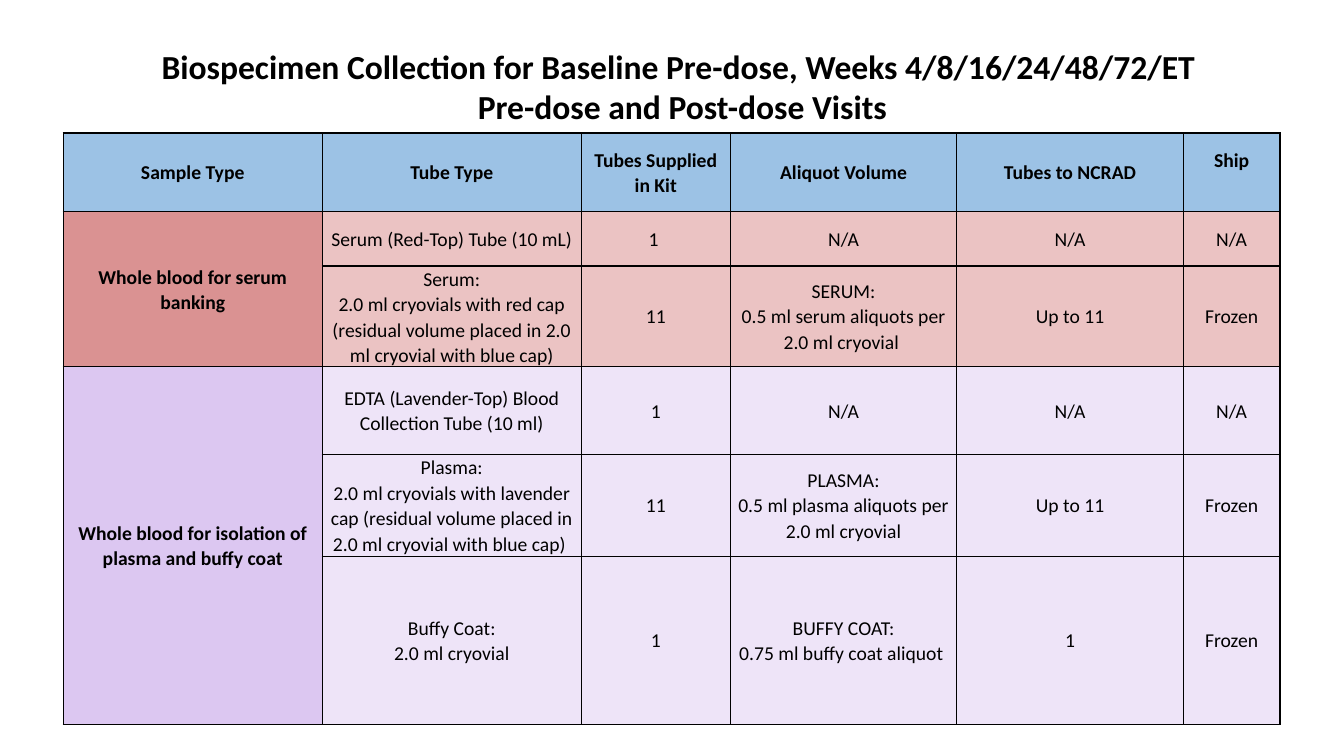
"""Builds the biospecimen collection slide: a centred title above a table of tubes and aliquots."""
from lxml import etree
from pptx import Presentation
from pptx import util as u
from pptx.dml.color import RGBColor
from pptx.enum import text
from pptx.oxml import parse_xml
from pptx.oxml.ns import nsdecls

COLORS = {
    "ink": "000000",
    "header": "9CC2E5",
    "serum_group": "DA9292",
    "serum": "EBC3C3",
    "plasma_group": "DCC7F1",
    "plasma": "EEE4F8",
}
COL_WIDTHS = [185, 185, 106.5, 161.8, 161.8, 69]
ROWS = [
    (56.2, "header", ["Sample Type", "Tube Type", "Tubes Supplied in Kit",
                      "Aliquot Volume", "Tubes to NCRAD", "Ship"]),
    (38.9, "serum", ["Whole blood for serum banking", "Serum (Red-Top) Tube (10 mL)",
                     "1 ", "N/A", "N/A", "N/A"]),
    (71.3, "serum", ["", "Serum:\n2.0 ml cryovials with red cap (residual volume placed "
                     "in 2.0 ml cryovial with blue cap)", "11",
                     "SERUM:\n0.5 ml serum aliquots per 2.0 ml cryovial ", "Up to 11", "Frozen"]),
    (62.6, "plasma", ["Whole blood for isolation of plasma and buffy coat",
                      "EDTA (Lavender-Top) Blood Collection Tube (10 ml)",
                      "1", "N/A", "N/A", "N/A"]),
    (72.7, "plasma", ["", "Plasma:\n2.0 ml cryovials with lavender cap (residual volume placed "
                      "in 2.0 ml cryovial with blue cap) ", "11",
                      "PLASMA:\n0.5 ml plasma aliquots per 2.0 ml cryovial", "Up to 11", "Frozen"]),
    (120.2, "plasma", ["", "Buffy Coat:\n2.0 ml cryovial", "1",
                       "BUFFY COAT:\n0.75 ml buffy coat aliquot ", "1", "Frozen"]),
]
GROUPS = [(1, 2), (3, 5)]
CELL_FORMAT = {
    "margin_left": u.Pt(5),
    "margin_right": u.Pt(5),
    "margin_top": 0,
    "margin_bottom": 0,
    "vertical_anchor": text.MSO_ANCHOR.MIDDLE,
}


def write(tf, content, size, bold, spacing):
    """Fills a text frame with centred paragraphs, one for each line."""
    tf.text = content
    font_format = {"name": "Calibri", "size": u.Pt(size), "bold": bold}
    for p in tf.paragraphs:
        p.alignment = text.PP_ALIGN.CENTER
        p.line_spacing = spacing
        for r in p.runs:
            for name, value in font_format.items():
                setattr(r.font, name, value)
            r.font.color.rgb = RGBColor.from_string(COLORS["ink"])


def add_borders(cell):
    """Draws a thin line on the four sides of a cell."""
    tc_pr = cell._tc.get_or_add_tcPr()
    for side in "LRTB":
        ln = parse_xml(f'<a:ln{side} {nsdecls("a")} w="{u.Pt(1)}"/>')
        fill = etree.SubElement(ln, "{%s}solidFill" % ln.nsmap["a"])
        etree.SubElement(fill, "{%s}srgbClr" % ln.nsmap["a"], val=COLORS["ink"])
        tc_pr.append(ln)


prs = Presentation()
prs.slide_width, prs.slide_height = u.Pt(960), u.Pt(540)
s = prs.slides.add_slide(prs.slide_layouts[6])

title = s.shapes.add_textbox(u.Pt(7.2), u.Pt(28.8), u.Pt(960.5), u.Pt(65.5))
tf = title.text_frame
tf.word_wrap = True
tf.vertical_anchor = text.MSO_ANCHOR.MIDDLE
write(tf, "Biospecimen Collection for Baseline Pre-dose, Weeks 4/8/16/24/48/72/ET \n"
      "Pre-dose and Post-dose Visits", 24, True, 1.0)

frame = s.shapes.add_table(len(ROWS), len(COL_WIDTHS), u.Pt(45.2), u.Pt(95),
                           u.Pt(sum(COL_WIDTHS)), u.Pt(sum(row[0] for row in ROWS)))
table = frame.table
table.first_row = table.horz_banding = False
for column, width in zip(table.columns, COL_WIDTHS):
    column.width = u.Pt(width)

for i, (height, kind, contents) in enumerate(ROWS):
    table.rows[i].height = u.Pt(height)
    for j, content in enumerate(contents):
        cell = table.cell(i, j)
        for name, value in CELL_FORMAT.items():
            setattr(cell, name, value)
        add_borders(cell)
        is_group = i > 0 and j == 0
        cell.fill.solid()
        cell.fill.fore_color.rgb = RGBColor.from_string(
            COLORS[kind + "_group" if is_group else kind])
        write(cell.text_frame, content, 14, i == 0 or j == 0, 1.07)

table.cell(0, 5).margin_bottom = u.Pt(18)
for first, last in GROUPS:
    table.cell(first, 0).merge(table.cell(last, 0))

prs.save("out.pptx")
